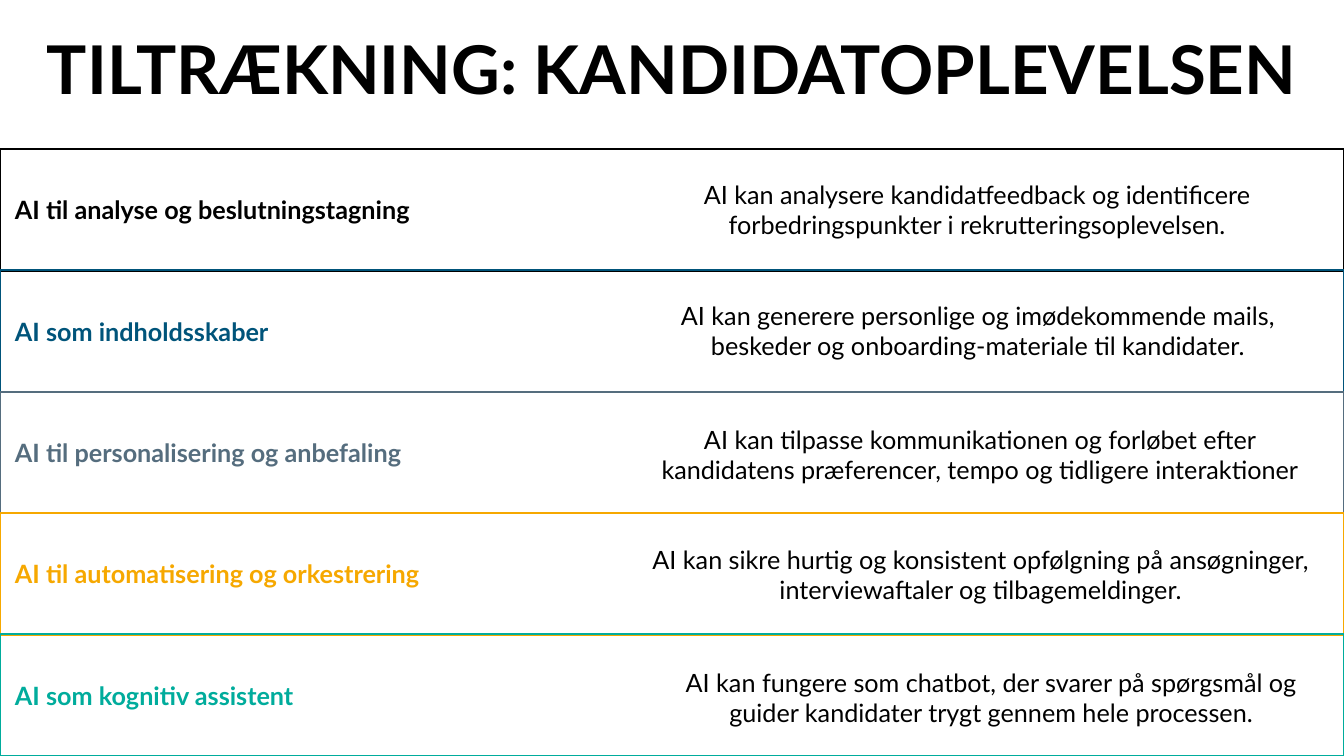
from dataclasses import dataclass

from pptx import Presentation
from pptx import util as u
from pptx.dml import color
from pptx.enum import shapes, text


@dataclass(frozen=True)
class Theme:
    font: str = "Lato"
    title_size: int = 48
    body_size: int = 18
    black: str = "000000"
    blue: str = "00547A"
    slate: str = "556D7E"
    amber: str = "F6A800"
    teal: str = "00AC9C"


theme = Theme()


def write(shape, words, size, ink, bold, alignment, left_inset=7.2):
    frame = shape.text_frame
    frame.word_wrap = True
    frame.vertical_anchor = text.MSO_ANCHOR.MIDDLE
    frame.margin_left = u.Pt(left_inset)
    paragraph = frame.paragraphs[0]
    paragraph.alignment = alignment
    run = paragraph.add_run()
    run.text = words
    run.font.name = theme.font
    run.font.size = u.Pt(size)
    run.font.bold = bold
    run.font.color.rgb = color.RGBColor.from_string(ink)


presentation = Presentation()
presentation.slide_width = u.Pt(960)
presentation.slide_height = u.Pt(540)
slide = presentation.slides.add_slide(presentation.slide_layouts[6])

# Rows: heading, colour, description, left and top of the description
rows = [
    ("AI til analyse og beslutningstagning", theme.black,
     "AI kan analysere kandidatfeedback og identificere "
     "forbedringspunkter i rekrutteringsoplevelsen.", 446, 106.5),
    ("AI som indholdsskaber", theme.blue,
     "AI kan generere personlige og imødekommende mails, "
     "beskeder og onboarding-materiale til kandidater.", 446.5, 193),
    ("AI til personalisering og anbefaling", theme.slate,
     "AI kan tilpasse kommunikationen og forløbet efter "
     "kandidatens præferencer, tempo og tidligere interaktioner", 448, 281.5),
    ("AI til automatisering og orkestrering", theme.amber,
     "AI kan sikre hurtig og konsistent opfølgning på ansøgninger, "
     "interviewaftaler og tilbagemeldinger.", 448.5, 367),
    ("AI som kognitiv assistent", theme.teal,
     "AI kan fungere som chatbot, der svarer på spørgsmål og "
     "guider kandidater trygt gennem hele processen.", 456, 455),
]
first_top, row_pitch, row_height = 106.4, 86.65, 87

# Outlined bands with their headings
bands = slide.shapes.add_group_shape()
for index, (heading, ink, *_) in enumerate(rows):
    band = bands.shapes.add_shape(
        shapes.MSO_SHAPE.RECTANGLE, u.Pt(0), u.Pt(first_top + index * row_pitch),
        u.Pt(960), u.Pt(row_height))
    band.shadow.inherit = False
    band.fill.background()
    band.line.color.rgb = color.RGBColor.from_string(ink)
    band.line.width = u.Pt(1.5)
    write(band, heading, theme.body_size, ink, True, text.PP_ALIGN.LEFT, 10.7)

# Title
title = slide.shapes.add_textbox(u.Pt(0), u.Pt(0), u.Pt(960), u.Pt(96.5))
write(title, "TILTRÆKNING: KANDIDATOPLEVELSEN", theme.title_size, theme.black,
      True, text.PP_ALIGN.CENTER)

# Descriptions
for _, _, description, left, top in rows:
    box = slide.shapes.add_textbox(u.Pt(left), u.Pt(top), u.Pt(504), u.Pt(86.5))
    write(box, description, theme.body_size, theme.black, False,
          text.PP_ALIGN.CENTER)

presentation.save("out.pptx")
